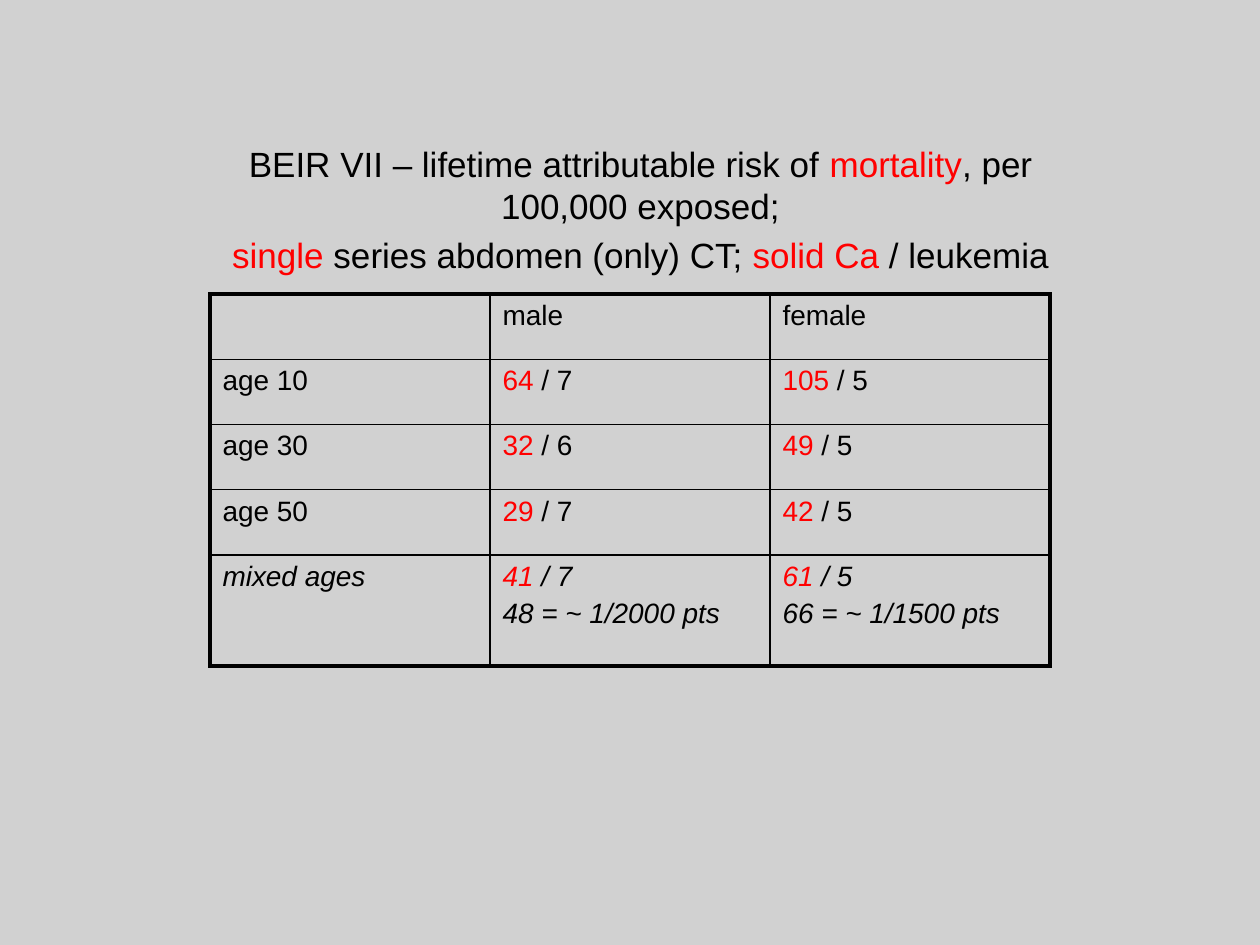
from dataclasses import dataclass

from lxml.etree import SubElement
from pptx import Presentation
from pptx.dml.color import RGBColor
from pptx.enum.text import MSO_ANCHOR, MSO_AUTO_SIZE, PP_ALIGN
from pptx.oxml.ns import qn
from pptx.util import Pt


@dataclass(frozen=True)
class Theme:
    bg: RGBColor = RGBColor(0xD1, 0xD1, 0xD1)
    ink: RGBColor = RGBColor(0, 0, 0)
    accent: RGBColor = RGBColor(0xFF, 0, 0)
    font: str = "Arial"
    title_size: float = 20
    cell_size: float = 16
    outer_line: float = 2.25
    inner_line: float = 1


THEME = Theme()

TITLE = [
    [("BEIR VII – lifetime attributable risk of ", False), ("mortality", True),
     (", per 100,000 exposed;", False)],
    [("single", True), (" series abdomen (only) CT; ", False), ("solid Ca", True),
     (" / leukemia", False)],
]

HEADER = ["", "male", "female"]
RISKS = [
    ("age 10", (64, 7), (105, 5)),
    ("age 30", (32, 6), (49, 5)),
    ("age 50", (29, 7), (42, 5)),
    ("mixed ages", (41, 7), (61, 5)),
]
TOTALS = ["48 = ~ 1/2000 pts", "66 = ~ 1/1500 pts"]


def plain(text):
    return [[(text, False)]] if text else []


def risk(solid, leukemia):
    return [[(str(solid), True), (f" / {leukemia}", False)]]


def write(tf, paragraphs, size, align=PP_ALIGN.LEFT, italic=False):
    for i, parts in enumerate(paragraphs):
        p = tf.add_paragraph() if i else tf.paragraphs[0]
        p.alignment = align
        p.space_before = Pt(size * 0.2)
        for text, accented in parts:
            r = p.add_run()
            r.text = text
            r.font.name = THEME.font
            r.font.size = Pt(size)
            r.font.italic = italic
            r.font.color.rgb = THEME.accent if accented else THEME.ink


def add_title(s):
    sp = s.shapes.title
    sp.left, sp.top, sp.width, sp.height = Pt(114), Pt(78), Pt(504), Pt(378)
    tf = sp.text_frame
    tf.word_wrap = True
    tf.auto_size = MSO_AUTO_SIZE.NONE
    tf.vertical_anchor = MSO_ANCHOR.TOP
    write(tf, TITLE, THEME.title_size, PP_ALIGN.CENTER)


def set_borders(cell, outer):
    tcPr = cell._tc.get_or_add_tcPr()
    for i, side in enumerate(("lnL", "lnR", "lnT", "lnB")):
        width = THEME.outer_line if side in outer else THEME.inner_line
        ln = SubElement(tcPr, qn(f"a:{side}"), w=str(Pt(width)))
        fill = SubElement(ln, qn("a:solidFill"))
        SubElement(fill, qn("a:srgbClr"), val=str(THEME.ink))
        tcPr.remove(ln)
        tcPr.insert(i, ln)


def add_risk_table(s):
    rows = [[plain(text) for text in HEADER]]
    rows += [[plain(age), risk(*male), risk(*female)] for age, male, female in RISKS]
    for content, total in zip(rows[-1][1:], TOTALS):
        content += plain(total)

    heights = [37.3] * (len(rows) - 1) + [63.4]
    frame = s.shapes.add_table(len(rows), len(HEADER), Pt(120), Pt(168),
                               Pt(480), Pt(sum(heights)))
    table = frame.table
    table.first_row = table.horz_banding = False
    for column in table.columns:
        column.width = Pt(480 / len(HEADER))
    last_row, last_col = len(rows) - 1, len(HEADER) - 1
    for i, row in enumerate(rows):
        table.rows[i].height = Pt(heights[i])
        for j, content in enumerate(row):
            cell = table.cell(i, j)
            cell.fill.background()
            write(cell.text_frame, content, THEME.cell_size, italic=i == last_row)
            edges = {"lnL": j == 0, "lnR": j == last_col,
                     "lnT": i == 0, "lnB": i == last_row}
            set_borders(cell, [side for side, outer in edges.items() if outer])


def main():
    prs = Presentation()
    prs.slide_width, prs.slide_height = Pt(720), Pt(540)
    s = prs.slides.add_slide(prs.slide_layouts[5])
    s.background.fill.solid()
    s.background.fill.fore_color.rgb = THEME.bg
    add_title(s)
    add_risk_table(s)
    prs.save("out.pptx")


if __name__ == "__main__":
    main()
